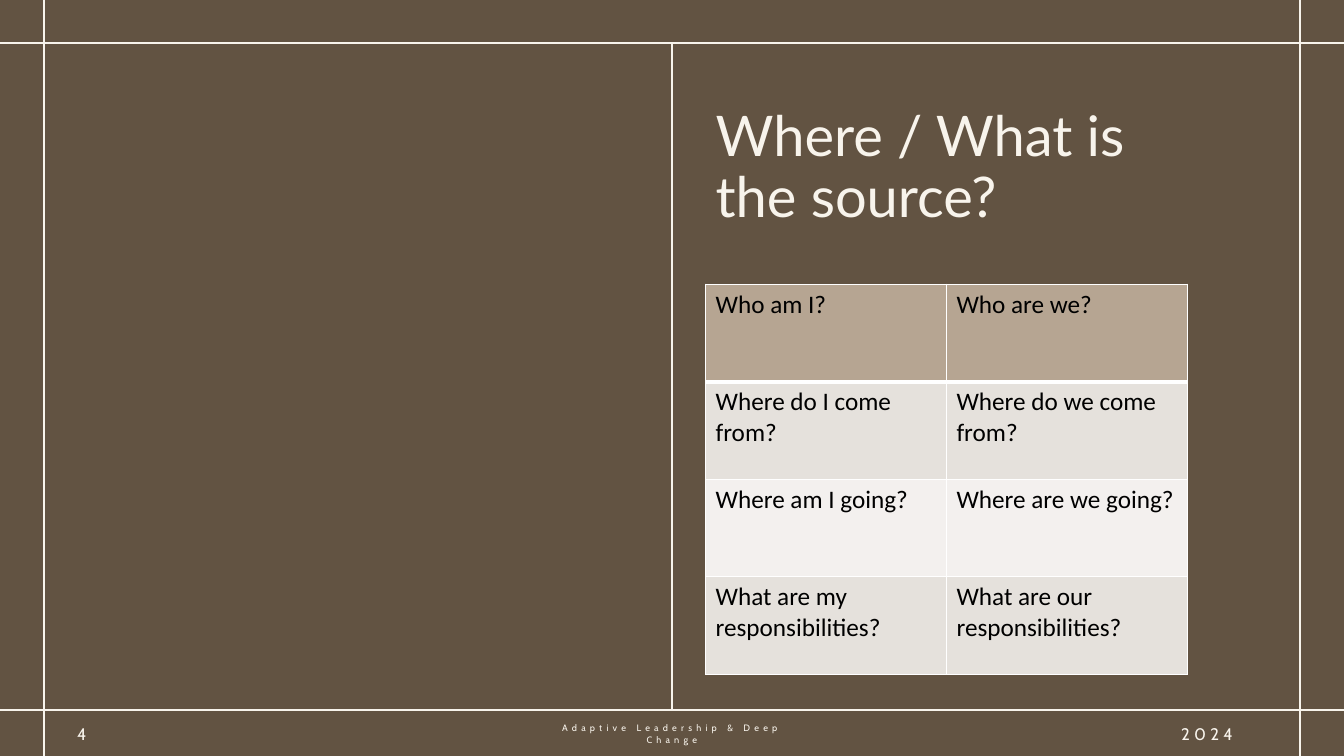
"""Build the slide asking where and what the source is."""
from dataclasses import dataclass

from lxml.etree import SubElement
from pptx import Presentation
from pptx.dml.color import RGBColor
from pptx.enum.shapes import MSO_CONNECTOR
from pptx.enum.text import MSO_ANCHOR, MSO_AUTO_SIZE, PP_ALIGN
from pptx.oxml.ns import qn
from pptx.util import Inches, Pt

WIDTH, HEIGHT = Inches(13.333), Inches(7.5)


@dataclass(frozen=True)
class Theme:
    """Hold the colours, fonts and sizes of the slide."""
    background: str = "625342"
    cream: str = "F8F4EC"
    ink: str = "000000"
    border: str = "FFFFFF"
    header: str = "B6A592"
    bands: tuple = ("E5E1DC", "F3F0EE")
    title_font: str = "Lato"
    table_font: str = "Calibri"
    footer_font: str = "Cabin"
    title_size: float = 40
    table_size: float = 18
    footer_size: float = 12
    caption_size: float = 6.6
    rule_width: float = 1.25


THEME = Theme()
LEFT, MIDDLE, RIGHT = 3.3, 50, 96.75
TOP, BOTTOM = 5.73, 93.87
RULES = [
    (0, TOP, 100, TOP),
    (0, BOTTOM, 100, BOTTOM),
    (LEFT, 100, LEFT, 0),
    (RIGHT, 100, RIGHT, 0),
    (MIDDLE, BOTTOM, MIDDLE, TOP),
]
QUESTIONS = [
    ("Who am I?", "Who are we?"),
    ("Where do I come from?", "Where do we come from?"),
    ("Where am I going?", "Where are we going?"),
    ("What are my responsibilities?", "What are our responsibilities?"),
]
FOOTERS = [
    ("4", 5, 7.8, THEME.footer_size, PP_ALIGN.LEFT),
    ("Adaptive Leadership & Deep Change", 39.45, 21.08, THEME.caption_size, PP_ALIGN.CENTER),
    ("2024", 87.15, 7.8, THEME.footer_size, PP_ALIGN.LEFT),
]


def place(*percentages):
    """Turn alternating horizontal and vertical percentages into lengths."""
    return [int((HEIGHT if index % 2 else WIDTH) * share / 100)
            for index, share in enumerate(percentages)]


def apply(target, values):
    """Set every attribute named in a dict of format values."""
    for name, value in values.items():
        setattr(target, name, value)


def write(frame, text, font, size, color, paragraph_format=None):
    """Write one formatted paragraph and return its run."""
    paragraph = frame.paragraphs[0]
    apply(paragraph, paragraph_format or {})
    run = paragraph.add_run()
    apply(run, {"text": text})
    apply(run.font, {"name": font, "size": Pt(size)})
    run.font.color.rgb = RGBColor.from_string(color)
    return run


def add_rule(slide, ends):
    """Draw one straight rule without a shadow."""
    rule = slide.shapes.add_connector(MSO_CONNECTOR.STRAIGHT, *place(*ends))
    rule.line.color.rgb = RGBColor.from_string(THEME.cream)
    rule.line.width = Pt(THEME.rule_width)
    SubElement(rule._element.spPr, qn("a:effectLst"))


def set_title(slide, text, box):
    """Move, format and fill the title placeholder."""
    title = slide.shapes.title
    apply(title, dict(zip(("left", "top", "width", "height"), place(*box))))
    apply(title.text_frame, {"word_wrap": True, "auto_size": MSO_AUTO_SIZE.NONE,
                             "vertical_anchor": MSO_ANCHOR.MIDDLE})
    write(title.text_frame, text, THEME.title_font, THEME.title_size, THEME.cream,
          {"alignment": PP_ALIGN.LEFT, "line_spacing": 0.9})


def add_footer(slide, text, left, width, size, alignment):
    """Add one letter-spaced text in the bottom strip."""
    box = slide.shapes.add_textbox(*place(left, 95.07, width, 4))
    apply(box.text_frame, {"word_wrap": True, "vertical_anchor": MSO_ANCHOR.MIDDLE})
    run = write(box.text_frame, text, THEME.footer_font, size, THEME.cream,
                {"alignment": alignment, "space_after": Pt(6)})
    run.font._element.set("spc", "300")


def add_borders(cell, widths):
    """Draw the four borders of a cell with widths in points."""
    properties = cell._tc.get_or_add_tcPr()
    for side, width in widths.items():
        line = SubElement(properties, qn(f"a:ln{side}"), w=str(Pt(width)))
        fill = SubElement(line, qn("a:solidFill"))
        SubElement(fill, qn("a:srgbClr"), val=THEME.border)


def add_question_table(slide, questions, box):
    """Add the table of questions with a header row and banded rows."""
    table = slide.shapes.add_table(len(questions), len(questions[0]), *place(*box)).table
    for row, texts in enumerate(questions):
        color = THEME.bands[(row - 1) % 2] if row else THEME.header
        borders = {"L": 1, "R": 1, "T": 3 if row == 1 else 1, "B": 1 if row else 3}
        for column, text in enumerate(texts):
            cell = table.cell(row, column)
            add_borders(cell, borders)
            cell.fill.solid()
            cell.fill.fore_color.rgb = RGBColor.from_string(color)
            run = write(cell.text_frame, text, THEME.table_font, THEME.table_size, THEME.ink)
            run.font.bold = False


def main():
    """Build and save the presentation."""
    presentation = Presentation()
    apply(presentation, {"slide_width": WIDTH, "slide_height": HEIGHT})
    slide = presentation.slides.add_slide(presentation.slide_layouts.get_by_name("Title Only"))
    slide.background.fill.solid()
    slide.background.fill.fore_color.rgb = RGBColor.from_string(THEME.background)
    for ends in RULES:
        add_rule(slide, ends)
    set_title(slide, "Where / What is the source?", (52.5, 7.07, 38.7, 30.53))
    add_question_table(slide, QUESTIONS, (52.5, 37.6, 35.85, 51.6))
    for footer in FOOTERS:
        add_footer(slide, *footer)
    presentation.save("out.pptx")


if __name__ == "__main__":
    main()
